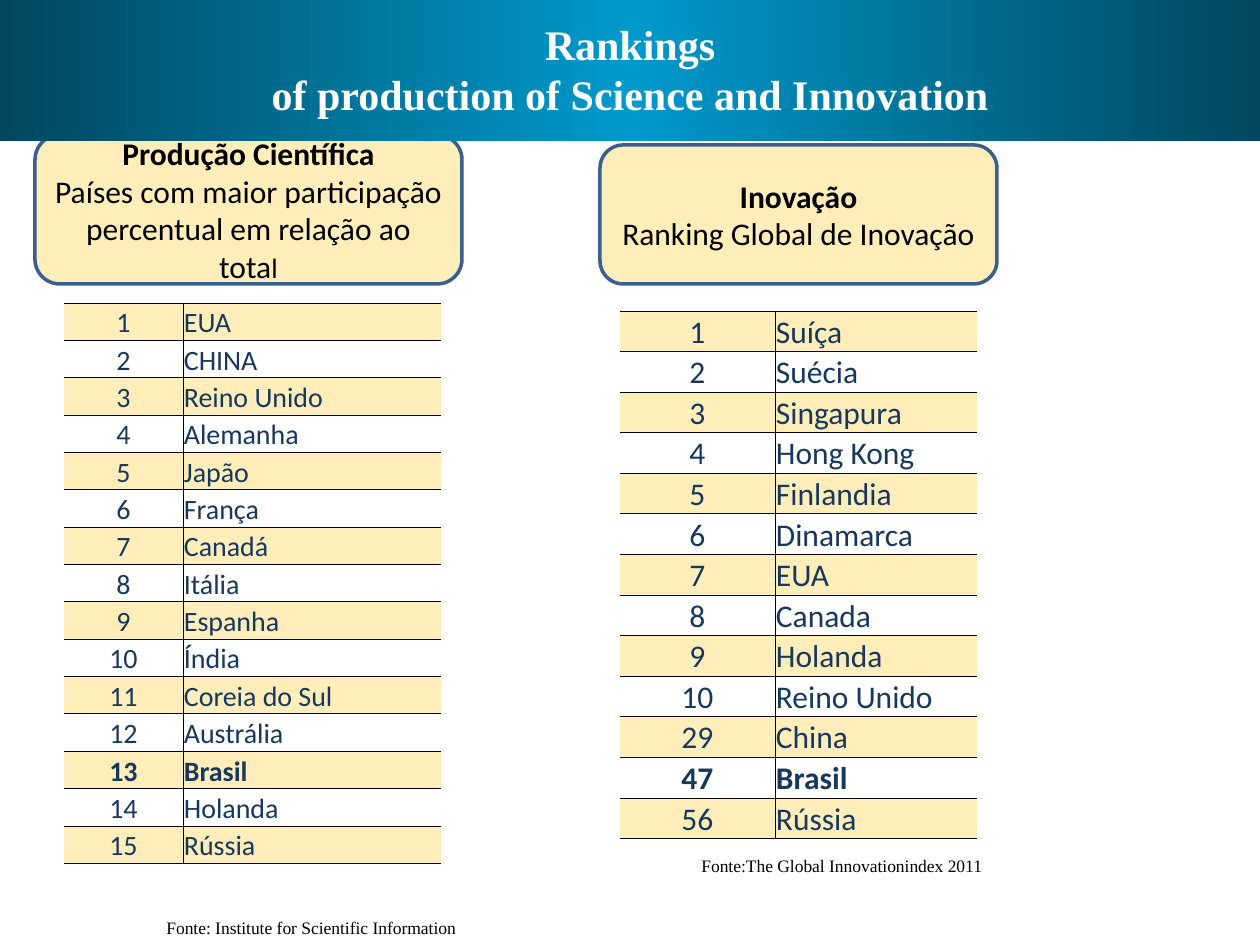
from copy import deepcopy
from lxml import etree
from pptx import Presentation, util as u
from pptx.dml.color import RGBColor
from pptx.enum import shapes, text
from pptx.oxml.ns import qn

SAND, NAVY, BLACK = "FFEEB9", "17375E", "000000"
MID = text.PP_ALIGN.CENTER


def px(n):
    return u.Emu(round(n * 914400 / 126))


def style(para, size, face, color, bold=False, align=None):
    para.alignment = align
    font = para.font
    font.size, font.name, font.bold = u.Pt(size), face, bold
    font.color.rgb = RGBColor.from_string(color)


prs = Presentation()
prs.slide_width, prs.slide_height = px(1260), px(945)
slide = prs.slides.add_slide(prs.slide_layouts[5])
items = slide.shapes

boxes = [
    (35, 135, 427, 149, "Produção Científica",
     ["Países com maior participação percentual em relação ao tota", "l"]),
    (600, 145, 397, 139, "Inovação", ["Ranking Global de Inovação"]),
]
for x, y, w, h, head, parts in boxes:
    box = items.add_shape(shapes.MSO_SHAPE.ROUNDED_RECTANGLE, px(x), px(y), px(w), px(h))
    box.shadow.inherit = False
    box.fill.solid()
    box.fill.fore_color.rgb = RGBColor.from_string(SAND)
    box.line.color.rgb = RGBColor.from_string("3A5F8C")
    box.line.width = u.Pt(2)
    frame = box.text_frame
    frame.word_wrap = True
    frame.vertical_anchor = text.MSO_ANCHOR.MIDDLE
    frame.text = head
    style(frame.paragraphs[0], 18, "Calibri", BLACK, True, MID)
    para = frame.add_paragraph()
    style(para, 18, "Calibri", BLACK, False, MID)
    for part in parts:
        run = para.add_run()
        run.text = part
        if part == "l":
            run.font.size = u.Pt(16)

title = items.title
title.left, title.top, title.width, title.height = px(0), px(-4), px(1260), px(145)
title.fill.gradient()
title.fill.gradient_angle = 0
stops = title.element.spPr.find(".//" + qn("a:gsLst"))
stops.append(deepcopy(stops[0]))
for stop, spot, tone in zip(title.fill.gradient_stops, (0, 0.5, 1), ("00475E", "0099CC", "00475E")):
    stop.position = spot
    stop.color.rgb = RGBColor.from_string(tone)
frame = title.text_frame
frame.text = "Rankings\nof production of Science and Innovation"
frame.auto_size = text.MSO_AUTO_SIZE.NONE
frame.word_wrap = False
frame.vertical_anchor = text.MSO_ANCHOR.MIDDLE
for para in frame.paragraphs:
    style(para, 24, "Times New Roman", "FFFFFF", True, MID)
title.element.getparent().append(title.element)

science = ["EUA", "CHINA", "Reino Unido", "Alemanha", "Japão", "França", "Canadá", "Itália",
           "Espanha", "Índia", "Coreia do Sul", "Austrália", "Brasil", "Holanda", "Rússia"]
novel = ["Suíça", "Suécia", "Singapura", "Hong Kong", "Finlandia", "Dinamarca", "EUA",
         "Canada", "Holanda", "Reino Unido", "China", "Brasil", "Rússia"]
tables = [
    (64, 303, 561, (119, 258), 16, list(enumerate(science, 1))),
    (620, 311, 528, (155, 202), 18, list(zip([*range(1, 11), 29, 47, 56], novel))),
]
for x, y, h, widths, size, rows in tables:
    grid = items.add_table(len(rows), 2, px(x), px(y), px(sum(widths)), px(h)).table
    grid.first_row = grid.horz_banding = False
    for col, width in zip(grid.columns, widths):
        col.width = px(width)
    for r, pair in enumerate(rows):
        grid.rows[r].height = px(h / len(rows))
        for c, value in enumerate(pair):
            cell = grid.cell(r, c)
            cell.text = str(value)
            cell.vertical_anchor = text.MSO_ANCHOR.BOTTOM
            cell.margin_left = cell.margin_right = cell.margin_top = px(1)
            cell.margin_bottom = 0
            style(cell.text_frame.paragraphs[0], size, "Calibri", NAVY,
                  pair[1] == "Brasil", MID if c == 0 else text.PP_ALIGN.LEFT)
            props = cell._tc.get_or_add_tcPr()
            for side in "LRTB":
                edge = etree.SubElement(props, qn("a:ln" + side), w=str(u.Pt(0.5)))
                if side == "LR"[c]:
                    etree.SubElement(edge, qn("a:noFill"))
                if side in "TB" + "RL"[c]:
                    fill = etree.SubElement(edge, qn("a:solidFill"))
                    etree.SubElement(fill, qn("a:srgbClr"), val=BLACK)
            if r % 2:
                cell.fill.background()
            else:
                cell.fill.solid()
                cell.fill.fore_color.rgb = RGBColor.from_string(SAND)

notes = [
    (154, 911, 367, "Fonte: Institute for Scientific Information"),
    (689, 849, 348, "Fonte:The Global Innovationindex 2011"),
]
for x, y, w, line in notes:
    frame = items.add_textbox(px(x), px(y), px(w), px(34)).text_frame
    frame.word_wrap = True
    frame.auto_size = text.MSO_AUTO_SIZE.SHAPE_TO_FIT_TEXT
    frame.text = line
    style(frame.paragraphs[0], 10, "Times New Roman", BLACK)

prs.save("out.pptx")
